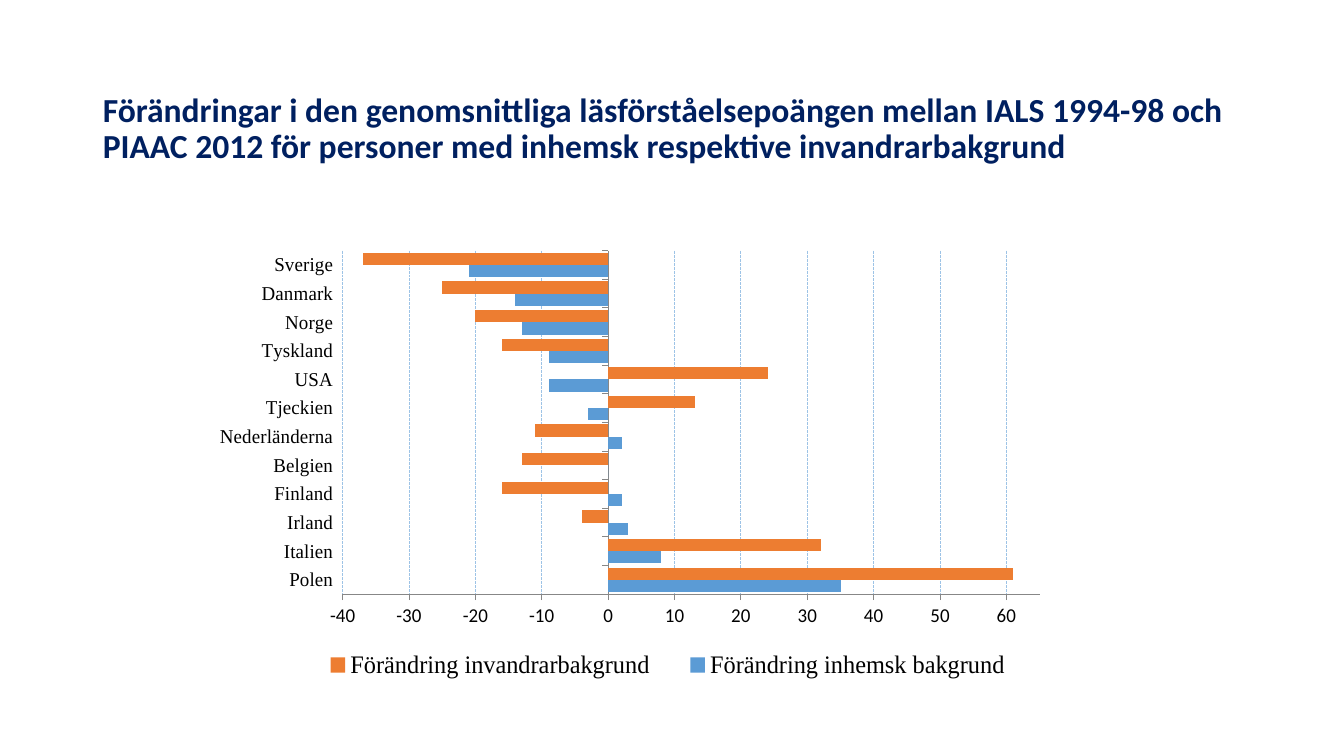
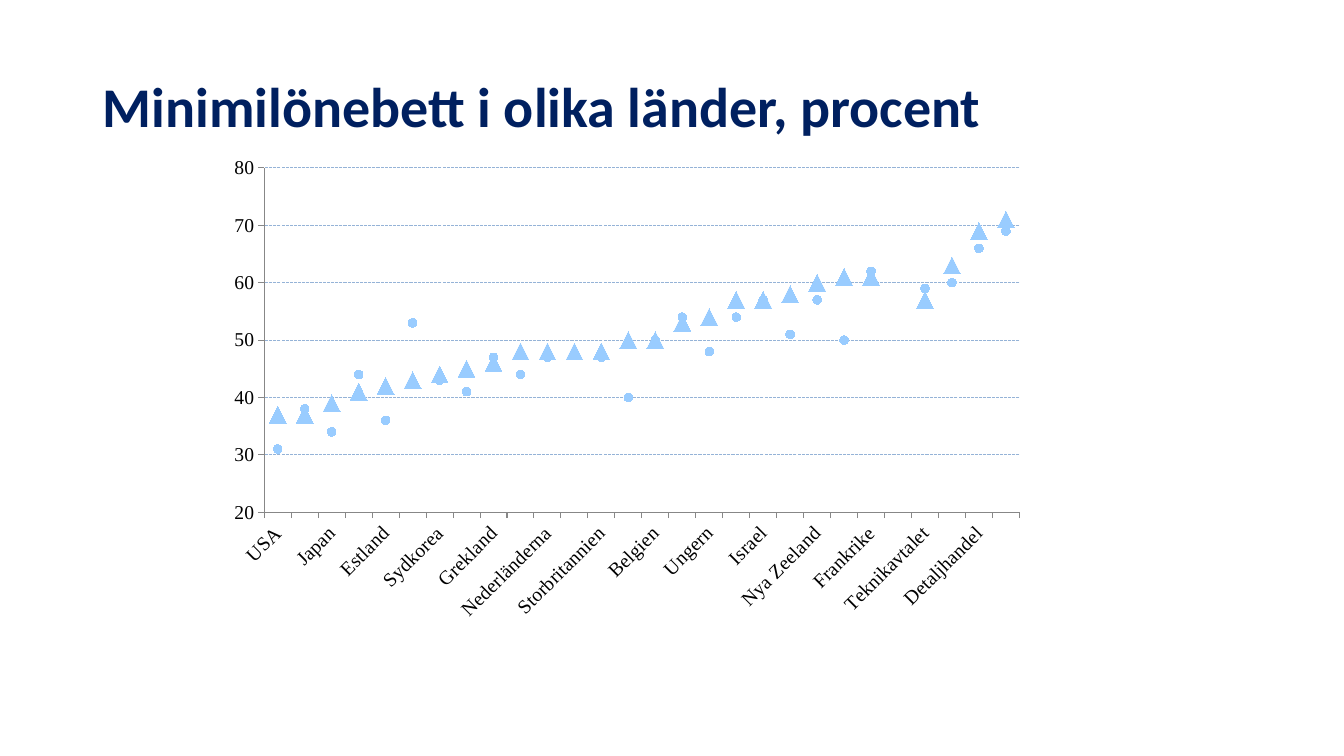
from lxml.etree import SubElement
from pptx import Presentation
from pptx.chart.data import CategoryChartData
from pptx.dml.color import RGBColor
from pptx.enum.chart import (XL_CHART_TYPE, XL_LEGEND_POSITION, XL_MARKER_STYLE,
                             XL_TICK_LABEL_POSITION, XL_TICK_MARK)
from pptx.enum.dml import MSO_LINE
from pptx.enum.text import MSO_ANCHOR, PP_ALIGN
from pptx.oxml.ns import qn
from pptx.util import Inches, Pt

# Shared style
NAVY, BLACK, AXIS_GREY = "002060", "000000", "878787"
BLUE, ORANGE, PALE_BLUE = "5B9BD5", "ED7D31", "99CCFF"
SANS, SERIF = "Calibri", "Times New Roman"

# Content: country (or agreement) and the value of each series
READING_TITLE = ("Förändringar i den genomsnittliga läsförståelsepoängen mellan IALS 1994-98 "
                 "och PIAAC 2012 för personer med inhemsk respektive invandrarbakgrund")
READING_SERIES = ["Förändring inhemsk bakgrund", "Förändring invandrarbakgrund"]
READING = [
    ("Polen", 35, 61), ("Italien", 8, 32), ("Irland", 3, -4), ("Finland", 2, -16),
    ("Belgien", 0, -13), ("Nederländerna", 2, -11), ("Tjeckien", -3, 13), ("USA", -9, 24),
    ("Tyskland", -9, -16), ("Norge", -13, -20), ("Danmark", -14, -25), ("Sverige", -21, -37),
]
WAGE_TITLE = "Minimilönebett i olika länder, procent"
WAGE_SERIES = ["2007", "2014"]
WAGES = [
    ("USA", 31, 37), ("Tjeckien", 38, 37), ("Japan", 34, 39), ("Spanien", 44, 41),
    ("Estland", 36, 42), ("Irland", 53, 43), ("Sydkorea", 43, 44), ("Kanada", 41, 45),
    ("Grekland", 47, 46), ("Slovakien", 44, 48), ("Nederländerna", 47, 48),
    ("Tyskland", None, 48), ("Storbritannien", 47, 48), ("Polen", 40, 50),
    ("Belgien", 50, 50), ("Australien", 54, 53), ("Ungern", 48, 54),
    ("Luxemburg", 54, 57), ("Israel", 57, 57), ("Portugal", 51, 58),
    ("Nya Zeeland", 57, 60), ("Slovenien", 50, 61), ("Frankrike", 62, 61),
    ("", None, None), ("Teknikavtalet", 59, 57), ("HÖK", 60, 63),
    ("Detaljhandel", 66, 69), ("HoR", 69, 71),
]


def rgb(color):
    return RGBColor.from_string(color)


def set_font(font, size, name, color=BLACK, bold=False):
    font.size, font.name, font.bold = Pt(size), name, bold
    font.color.rgb = rgb(color)


def add_titled_slide(prs, title, size, top):
    s = prs.slides.add_slide(prs.slide_layouts[5])
    sp = s.shapes.title
    sp.left, sp.top, sp.width, sp.height = map(Inches, (0.92, top, 11.5, 1.45))
    tf = sp.text_frame
    tf.text, tf.word_wrap, tf.vertical_anchor = title, True, MSO_ANCHOR.MIDDLE
    p = tf.paragraphs[0]
    p.alignment, p.line_spacing = PP_ALIGN.LEFT, 0.9
    set_font(p.font, size, SANS, NAVY, bold=True)
    return s


def manual_layout(box, inner=False):
    """A c:layout element from left, top, width, height as shares of the chart."""
    layout = SubElement(SubElement(box["parent"], qn("c:temp")), qn("c:layout"))
    box["parent"].remove(layout.getparent())
    manual = SubElement(layout, qn("c:manualLayout"))
    parts = [("layoutTarget", "inner")] if inner else []
    parts += [("xMode", "edge"), ("yMode", "edge")] + list(zip("xywh", box["shares"]))
    for tag, val in parts:
        SubElement(manual, qn("c:" + tag)).set("val", str(val))
    return layout


def place(parent, shares, index, inner=False):
    for old in parent.findall(qn("c:layout")):
        parent.remove(old)
    parent.insert(index, manual_layout({"parent": parent, "shares": shares}, inner))


def add_chart(s, kind, names, rows, box, plot_box, limits, grid, value_font):
    data = CategoryChartData(number_format="0")
    cats, *columns = zip(*rows)
    data.categories = cats
    for name, values in zip(names, columns):
        data.add_series(name, values)
    chart = s.shapes.add_chart(kind, *map(Inches, box), data).chart
    chart.has_title = chart.has_legend = False
    set_font(chart.font, 10, value_font)
    plot = chart.plots[0]
    plot.vary_by_categories = False
    place(plot._element.getparent(), plot_box, 0, inner=True)

    # Axes and grid
    cat, val = chart.category_axis, chart.value_axis
    for axis, font in ((cat, SERIF), (val, value_font)):
        axis.major_tick_mark, axis.minor_tick_mark = XL_TICK_MARK.OUTSIDE, XL_TICK_MARK.NONE
        axis.format.line.color.rgb = rgb(AXIS_GREY)
        axis.format.line.width = Pt(0.75)
        set_font(axis.tick_labels.font, 14, font)
    cat.has_major_gridlines = False
    val.minimum_scale, val.maximum_scale = limits
    val.major_unit = 10
    val.tick_labels.number_format, val.tick_labels.number_format_is_linked = "0", False
    val.has_major_gridlines = True
    line = val.major_gridlines.format.line
    line.color.rgb, line.width, line.dash_style = rgb(grid), Pt(0.75), MSO_LINE.SQUARE_DOT
    return chart


def reading_slide(prs):
    s = add_titled_slide(prs, READING_TITLE, 24, 0.56)
    chart = add_chart(s, XL_CHART_TYPE.BAR_CLUSTERED, READING_SERIES, READING,
                      (2.18, 2.25, 8.35, 4.65), (0.115, 0.051, 0.858, 0.733),
                      (-40, 65), "9DC3E6", SANS)
    chart.category_axis.tick_label_position = XL_TICK_LABEL_POSITION.LOW
    plot = chart.plots[0]
    plot.gap_width, plot.overlap = 33, 0
    for series, color in zip(plot.series, (BLUE, ORANGE)):
        series.invert_if_negative = False
        series.format.fill.solid()
        series.format.fill.fore_color.rgb = rgb(color)
    # Legend under the plot
    chart.has_legend = True
    legend = chart.legend
    legend.position, legend.include_in_layout = XL_LEGEND_POSITION.RIGHT, False
    set_font(legend.font, 18, SERIF)
    place(legend._element, (0.06, 0.89, 0.91, 0.09), 1)


def wage_slide(prs):
    s = add_titled_slide(prs, WAGE_TITLE, 40, 0.36)
    chart = add_chart(s, XL_CHART_TYPE.LINE_MARKERS, WAGE_SERIES, WAGES,
                      (2.02, 1.39, 8.35, 5.43), (0.072, 0.051, 0.897, 0.629),
                      (20, 80), "95B3D7", SERIF)
    # Slanted country names
    chart.category_axis._element.find(qn("c:txPr")).find(qn("a:bodyPr")).set("rot", "-2700000")
    markers = ((XL_MARKER_STYLE.CIRCLE, 6), (XL_MARKER_STYLE.TRIANGLE, 12))
    for series, (style, size) in zip(chart.plots[0].series, markers):
        series.smooth = False
        series.format.line.fill.background()
        marker = series.marker
        marker.style, marker.size = style, size
        marker.format.fill.solid()
        marker.format.fill.fore_color.rgb = rgb(PALE_BLUE)
        marker.format.line.fill.background()


def main():
    prs = Presentation()
    prs.slide_width, prs.slide_height = Inches(13.33), Inches(7.5)
    reading_slide(prs)
    wage_slide(prs)
    prs.save("out.pptx")


if __name__ == "__main__":
    main()
